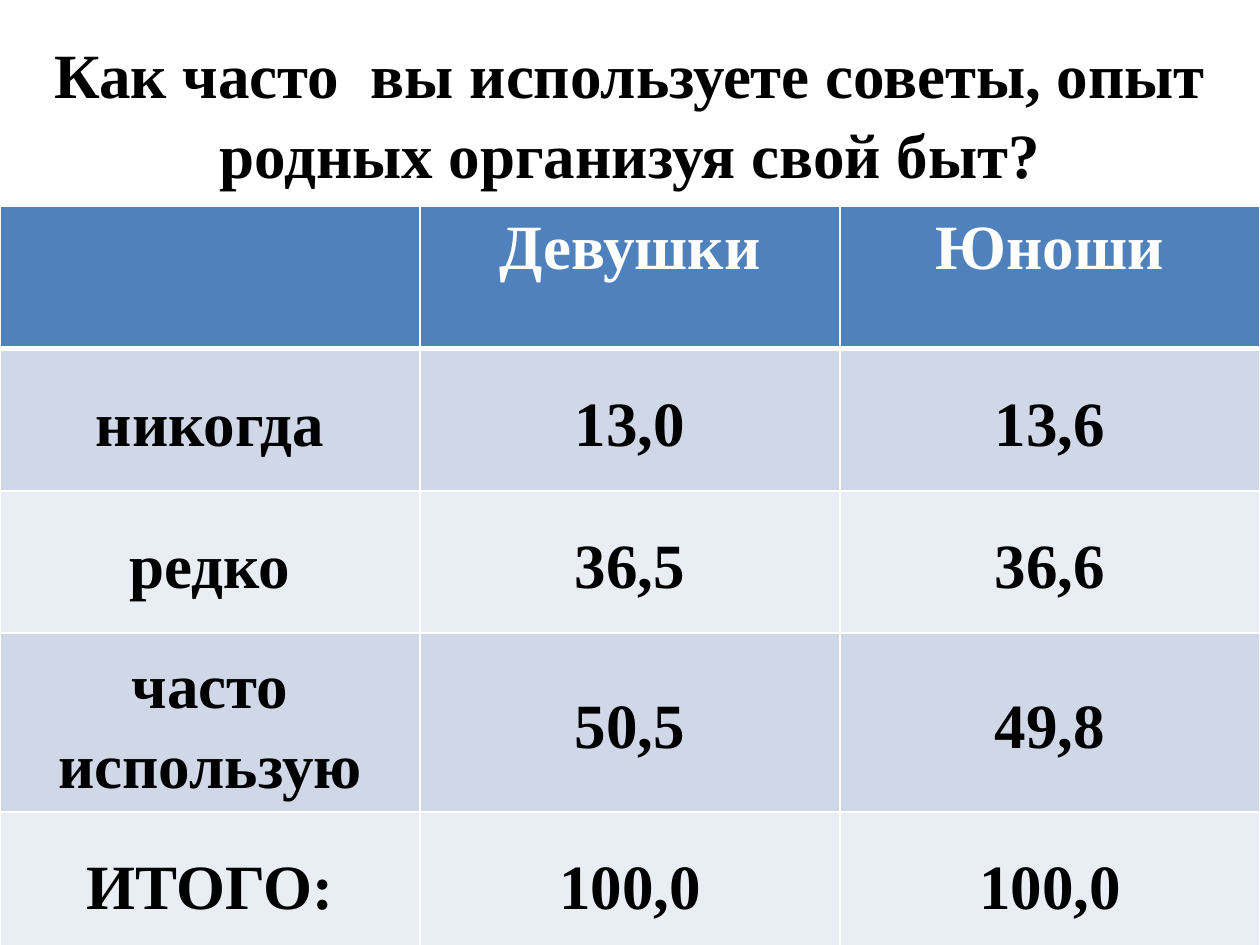
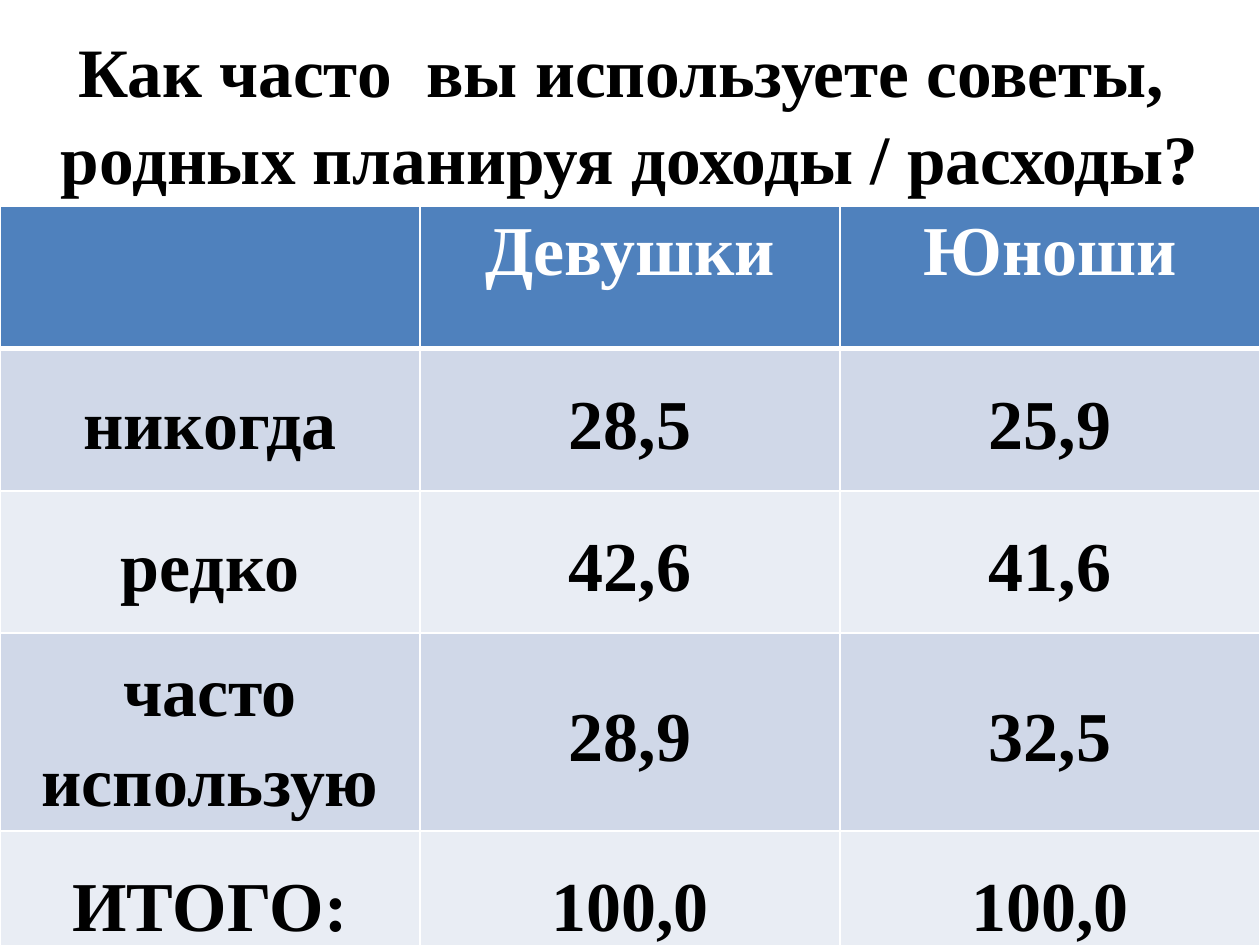
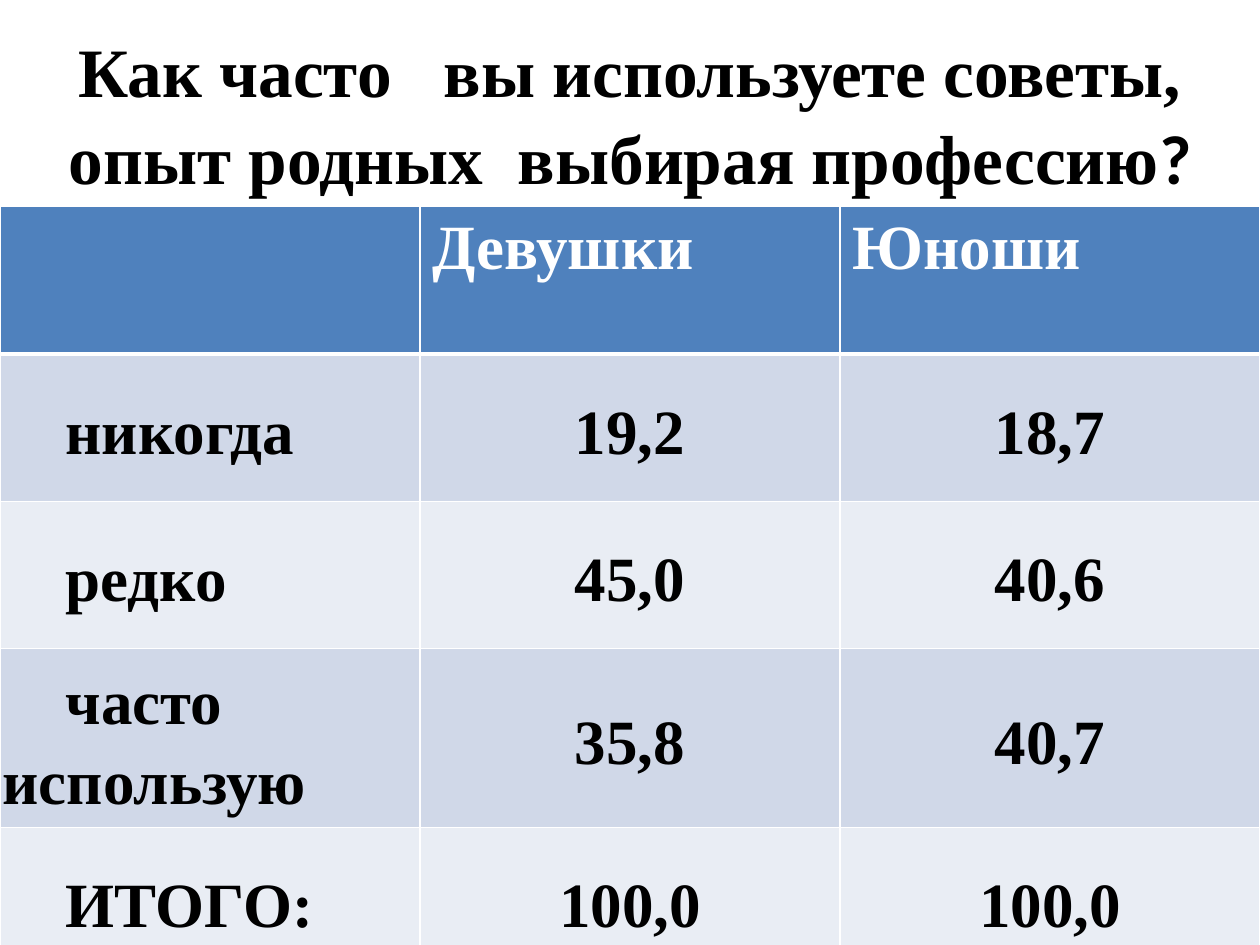
"""Build three survey slides, each with a question and a table of answers."""
from lxml import etree
from pptx import Presentation
from pptx.dml.color import RGBColor
from pptx.enum.text import MSO_ANCHOR, PP_ALIGN
from pptx.oxml.ns import qn
from pptx.util import Pt

CENTER, LEFT = PP_ALIGN.CENTER, PP_ALIGN.LEFT
TOP, MIDDLE = MSO_ANCHOR.TOP, MSO_ANCHOR.MIDDLE

WIDTH, HEIGHT = 720, 540
TITLE_HEIGHT, TABLE_TOP = 123.8, 118.1
COLORS = {"text": "000000", "white": "FFFFFF", "header": "4F81BD",
          "odd": "D0D8E8", "even": "E9EDF4"}
HEADER = ["", "Девушки", "Юноши"]
ANSWERS = ["никогда", "редко", "часто использую", "ИТОГО:"]
MARGINS = ("margin_left", "margin_top", "margin_right", "margin_bottom")

SLIDES = [
    {"title": [("Как часто  вы используете советы, опыт родных организуя свой быт?",
                "Times New Roman")],
     "title_size": 36, "size": 36, "row_height": 81.2,
     "header_align": CENTER, "answer_align": CENTER, "indent": 0,
     "values": [("13,0", "13,6"), ("36,5", "36,6"), ("50,5", "49,8"), ("100,0", "100,0")]},
    {"title": [("Как часто  вы используете советы,  родных планируя доходы / расходы?",
                "Times New Roman")],
     "title_size": 39.6, "size": 40, "row_height": 81.2,
     "header_align": CENTER, "answer_align": CENTER, "indent": 0,
     "values": [("28,5", "25,9"), ("42,6", "41,6"), ("28,9", "32,5"), ("100,0", "100,0")]},
    {"title": [("Как часто   вы используете советы, опыт родных  выбирая профессию",
                "Times New Roman"), ("?", "Calibri")],
     "title_size": 39.6, "size": 36, "row_height": 84.2,
     "header_align": LEFT, "answer_align": LEFT, "indent": 36,
     "values": [("19,2", "18,7"), ("45,0", "40,6"), ("35,8", "40,7"), ("100,0", "100,0")]},
]


def set_attrs(obj, values):
    for name, value in values.items():
        setattr(obj, name, value)


class Deck:
    def __init__(self):
        self.prs = Presentation()
        set_attrs(self.prs, {"slide_width": Pt(WIDTH), "slide_height": Pt(HEIGHT)})
        self.slide = None

    def add_slide(self):
        self.slide = self.prs.slides.add_slide(self.prs.slide_layouts[6])

    def add_text(self, p, text, size, color, font="Times New Roman"):
        r = p.add_run()
        r.text = text
        set_attrs(r.font, {"name": font, "size": Pt(size), "bold": True})
        r.font.color.rgb = RGBColor.from_string(COLORS[color])

    def title(self, runs, size):
        sp = self.slide.shapes.add_textbox(0, 0, Pt(WIDTH), Pt(TITLE_HEIGHT))
        tf = sp.text_frame
        set_attrs(tf, {"word_wrap": True, "vertical_anchor": MIDDLE, "margin_top": Pt(7)})
        p = tf.paragraphs[0]
        set_attrs(p, {"alignment": CENTER, "line_spacing": 1.05})
        for text, font in runs:
            self.add_text(p, text, size, "text", font)

    def borders(self, cell, widths):
        tc_pr = cell._tc.get_or_add_tcPr()
        for i, (side, width) in enumerate(widths.items()):
            ln = etree.Element(qn(f"a:ln{side}"), w=str(Pt(width)))
            fill = etree.SubElement(ln, qn("a:solidFill"))
            etree.SubElement(fill, qn("a:srgbClr"), val=COLORS["white"])
            tc_pr.insert(i, ln)

    def cell(self, cell, text, row, size, align, indent):
        header = row == 0
        color = "header" if header else "odd" if row % 2 else "even"
        cell.fill.solid()
        cell.fill.fore_color.rgb = RGBColor.from_string(COLORS[color])
        self.borders(cell, {"L": 1, "R": 1, "T": 3 if row == 1 else 1, "B": 3 if header else 1})
        cell.vertical_anchor = TOP if header else MIDDLE
        p = cell.text_frame.paragraphs[0]
        p.alignment = align
        if not header:
            set_attrs(cell, dict.fromkeys(MARGINS, Pt(1.5)))
            p.line_spacing = 1.15
        if indent:
            p._p.get_or_add_pPr().set("indent", str(Pt(indent)))
        if text:
            self.add_text(p, text, size, "white" if header else "text")

    def table(self, values, size, row_height, header_align, answer_align, indent):
        rows = [HEADER] + [[answer, *pair] for answer, pair in zip(ANSWERS, values)]
        frame = self.slide.shapes.add_table(len(rows), len(HEADER), 0, Pt(TABLE_TOP),
                                            Pt(WIDTH), Pt(row_height * len(rows)))
        for i, texts in enumerate(rows):
            frame.table.rows[i].height = Pt(row_height)
            for j, text in enumerate(texts):
                answer = i > 0 and j == 0
                align = header_align if i == 0 else answer_align if answer else CENTER
                self.cell(frame.table.cell(i, j), text, i, size, align,
                          indent if answer else 0)


def main():
    deck = Deck()
    for item in SLIDES:
        deck.add_slide()
        deck.title(item["title"], item["title_size"])
        deck.table(item["values"], item["size"], item["row_height"],
                   item["header_align"], item["answer_align"], item["indent"])
    deck.prs.save("out.pptx")


if __name__ == "__main__":
    main()
